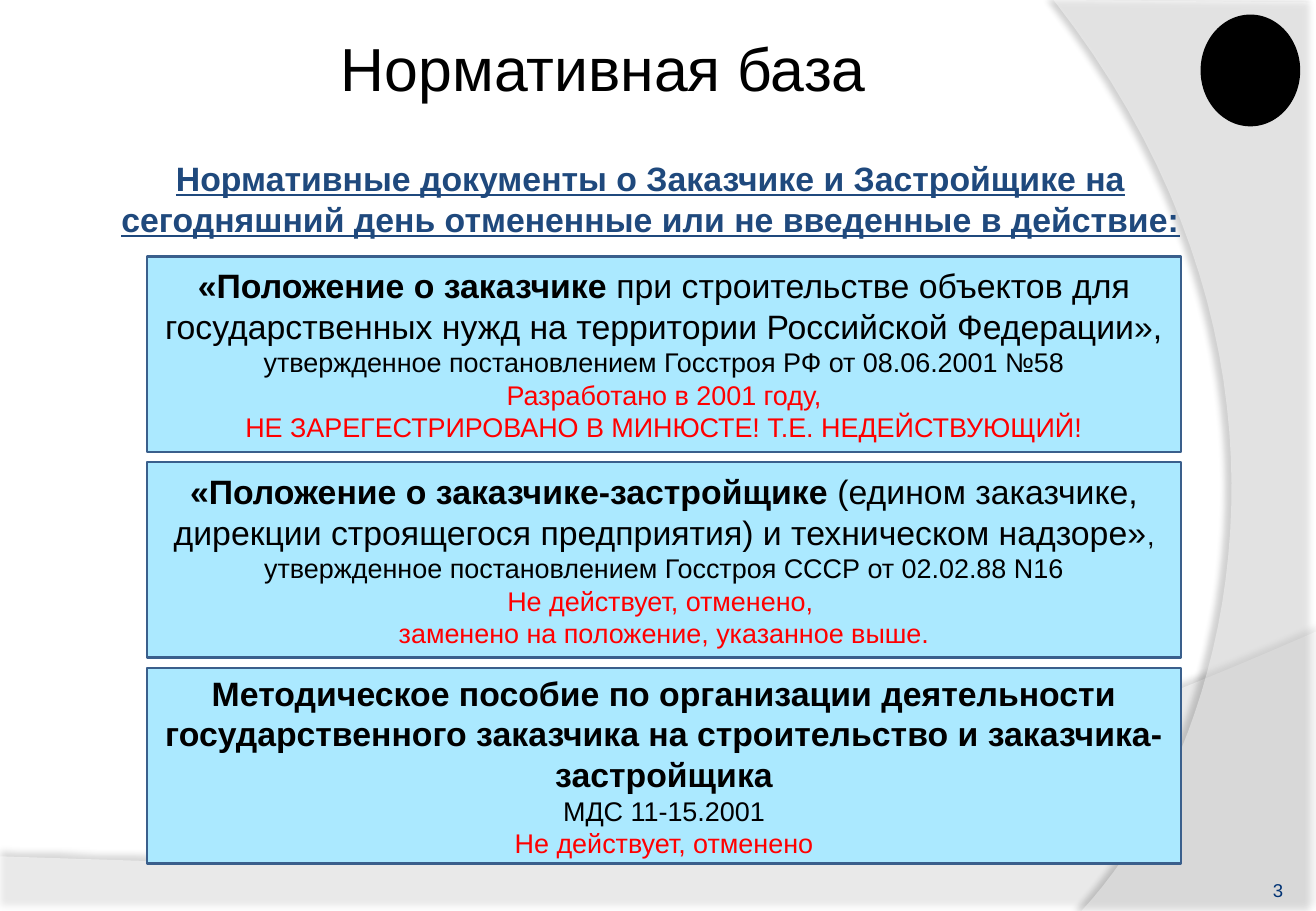
from dataclasses import dataclass
from typing import Any

from lxml.etree import SubElement
from pptx import Presentation
from pptx.dml.color import RGBColor
from pptx.enum.shapes import MSO_SHAPE as Shape
from pptx.enum.text import MSO_ANCHOR as Anchor, PP_ALIGN as Align
from pptx.oxml.ns import qn
from pptx.util import Inches, Pt

Point = tuple[float, float]


@dataclass(frozen=True)
class Theme:
    font: str = "Arial"
    white: str = "FFFFFF"
    black: str = "000000"
    heading: str = "1F497D"
    number: str = "003274"
    alert: str = "FF0000"
    card: str = "ABE9FF"
    border: str = "3A5F8C"
    title_size: int = 36
    lead_size: int = 20
    detail_size: int = 16
    number_size: int = 11


THEME = Theme()


@dataclass(frozen=True)
class Span:
    text: str
    size: int = THEME.detail_size
    color: str = THEME.black
    bold: bool = False
    underline: bool = False


@dataclass(frozen=True)
class Wave:
    """Translucent outline: corners, then a Bezier curve from the last corner."""
    corners: list[Point]
    controls: tuple[Point, Point]
    end: Point
    opacity: int
    shadow_opacity: int
    distance: float
    direction: int


Paragraphs = list[list[Span]]


def lead(text: str, bold: bool = False) -> Span:
    return Span(text, THEME.lead_size, bold=bold)


def alert(text: str) -> Span:
    return Span(text, color=THEME.alert)


def rgb(color: str) -> RGBColor:
    return RGBColor.from_string(color)


def write_text(box: Any, paragraphs: Paragraphs, align: Align = Align.CENTER,
               anchor: Anchor = Anchor.MIDDLE, inset: float | None = None,
               line_spacing: float = 1.0) -> None:
    frame = box.text_frame
    frame.word_wrap = True
    frame.vertical_anchor = anchor
    if inset is not None:
        for side in ("left", "top", "right", "bottom"):
            setattr(frame, f"margin_{side}", Inches(inset))
    for index, spans in enumerate(paragraphs):
        para = frame.add_paragraph() if index else frame.paragraphs[0]
        para.alignment = align
        para.line_spacing = line_spacing
        for span in spans:
            run = para.add_run()
            run.text = span.text
            formats = {"name": THEME.font, "size": Pt(span.size),
                       "bold": span.bold, "underline": span.underline}
            for name, value in formats.items():
                setattr(run.font, name, value)
            run.font.color.rgb = rgb(span.color)


def add_text(page: Any, left: float, top: float, width: float, height: float,
             paragraphs: Paragraphs, **layout: Any) -> None:
    box = page.shapes.add_textbox(*map(Inches, (left, top, width, height)))
    write_text(box, paragraphs, **layout)


def add_shape(page: Any, kind: Shape, left: float, top: float, width: float,
              height: float, fill: str, border: str | None = None) -> Any:
    shape = page.shapes.add_shape(kind, *map(Inches, (left, top, width, height)))
    shape.shadow.inherit = False
    shape.fill.solid()
    shape.fill.fore_color.rgb = rgb(fill)
    if border:
        shape.line.color.rgb = rgb(border)
        shape.line.width = Pt(1.5)
    else:
        shape.line.fill.background()
    return shape


def curve(start: Point, controls: tuple[Point, Point], end: Point,
          steps: int = 40) -> list[Point]:
    points = []
    for step in range(1, steps + 1):
        t = step / steps
        weights = ((1 - t) ** 3, 3 * t * (1 - t) ** 2, 3 * t * t * (1 - t), t ** 3)
        nodes = (start, *controls, end)
        points.append((sum(w * n[0] for w, n in zip(weights, nodes)),
                       sum(w * n[1] for w, n in zip(weights, nodes))))
    return points


def add_wave(page: Any, wave: Wave) -> None:
    outline = wave.corners + curve(wave.corners[-1], wave.controls, wave.end)
    first, *rest = [(Inches(x), Inches(y)) for x, y in outline]
    builder = page.shapes.build_freeform(*first)
    builder.add_line_segments(rest, close=True)
    shape = builder.convert_to_shape()
    shape.fill.solid()
    shape.fill.fore_color.rgb = rgb(THEME.white)
    shape.line.fill.background()
    shape.shadow.inherit = False
    properties = shape.element.spPr
    # Fill opacity and outer shadow
    fill_color = properties.find(qn("a:solidFill")).find(qn("a:srgbClr"))
    SubElement(fill_color, qn("a:alpha"), val=str(wave.opacity * 1000))
    shadow = SubElement(
        properties.find(qn("a:effectLst")), qn("a:outerShdw"),
        blurRad=str(Pt(4)), dist=str(Pt(wave.distance)),
        dir=str(wave.direction * 60000), algn="ctr", rotWithShape="0")
    shade = SubElement(shadow, qn("a:srgbClr"), val=THEME.black)
    SubElement(shade, qn("a:alpha"), val=str(wave.shadow_opacity * 1000))


WAVES = [
    Wave([(0, 7.05), (0, 7.5), (10.83, 7.5), (10.83, 5.2)],
         ((6.06, 7.29), (4.23, 7.19)), (0, 7.05), 45, 35, 3.5, 270),
    Wave([(10.83, 0.02), (10.83, 7.5), (8.9, 7.5)],
         ((10.12, 6.19), (11.02, 3)), (8.67, 0), 40, 45, 4, 180),
]

DOCUMENTS: list[Paragraphs] = [
    [[lead("«Положение о заказчике", bold=True),
      lead(" при строительстве объектов для государственных нужд на территории "
           "Российской Федерации», "),
      Span("утвержденное постановлением Госстроя РФ от 08.06.2001 №58")],
     [alert("Разработано в 2001 году,")],
     [alert("НЕ ЗАРЕГЕСТРИРОВАНО В МИНЮСТЕ! Т.Е. НЕДЕЙСТВУЮЩИЙ!")]],
    [[lead("«Положение о заказчике-застройщике", bold=True),
      lead(" (едином заказчике, дирекции строящегося предприятия) "
           "и техническом надзоре»"),
      Span(", утвержденное постановлением Госстроя СССР от 02.02.88 N16")],
     [alert("Не действует, отменено, ")],
     [alert("заменено на положение, указанное выше.")]],
    [[lead("Методическое пособие по организации деятельности государственного "
           "заказчика на строительство и заказчика-застройщика", bold=True)],
     [Span("МДС 11-15.2001")],
     [alert("Не действует, отменено")]],
]


def main() -> None:
    deck = Presentation()
    deck.slide_width, deck.slide_height = Inches(10.83), Inches(7.5)
    page = deck.slides.add_slide(deck.slide_layouts[6])

    # Background waves and emblem placeholder
    for wave in WAVES:
        add_wave(page, wave)
    add_shape(page, Shape.OVAL, 9.88, 0.12, 0.82, 0.92, THEME.black)

    # Title, heading and page number
    add_text(page, 0.54, 0, 8.85, 1.22,
             [[Span("Нормативная база", THEME.title_size)]],
             inset=0, line_spacing=0.8)
    add_text(page, 0.55, 1.25, 9.61, 0.8,
             [[Span("Нормативные документы о Заказчике и Застройщике на сегодняшний "
                    "день отмененные или не введенные в действие:",
                    THEME.lead_size, THEME.heading, bold=True, underline=True)]],
             anchor=Anchor.TOP)
    add_text(page, 9.66, 7.02, 0.9, 0.4,
             [[Span("3", THEME.number_size, THEME.number)]],
             align=Align.RIGHT, anchor=Anchor.BOTTOM, inset=0)

    # Document cards
    card_top, card_pitch = 2.11, 1.695
    for index, paragraphs in enumerate(DOCUMENTS):
        card = add_shape(page, Shape.RECTANGLE, 1.21, card_top + index * card_pitch,
                         8.51, 1.61, THEME.card, THEME.border)
        write_text(card, paragraphs)

    deck.save("out.pptx")


if __name__ == "__main__":
    main()
